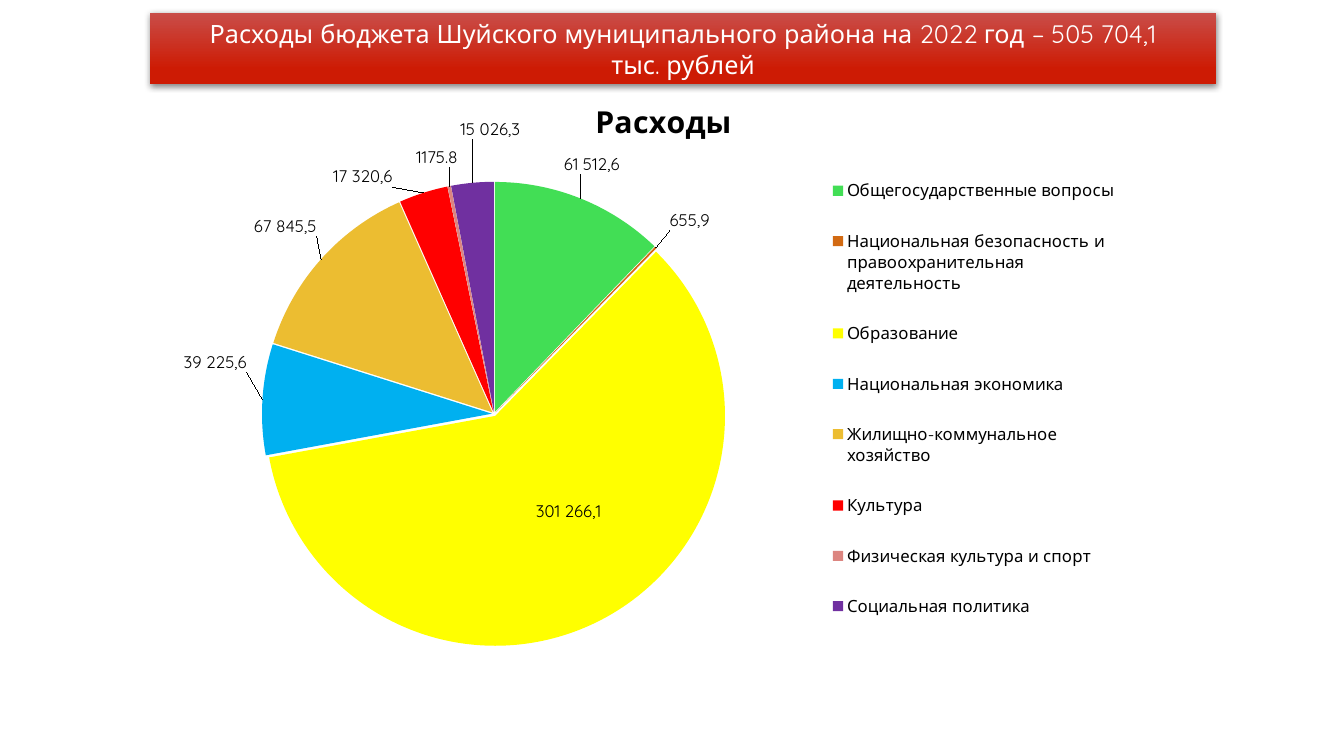
from lxml import etree
from pptx import Presentation
from pptx.chart.data import CategoryChartData as Data
from pptx.dml.color import RGBColor
from pptx.enum.chart import XL_CHART_TYPE as Kind
from pptx.enum.chart import XL_LABEL_POSITION as Spot
from pptx.enum.chart import XL_LEGEND_POSITION as Side
from pptx.enum.text import MSO_ANCHOR as Anchor
from pptx.enum.text import MSO_AUTO_SIZE as Fit
from pptx.enum.text import PP_ALIGN as Align
from pptx.oxml import parse_xml
from pptx.oxml.ns import qn
from pptx.util import Cm, Pt

FONT = "Quicksand"
BLACK = RGBColor(0x00, 0x00, 0x00)
WHITE = RGBColor(0xFF, 0xFF, 0xFF)
ROSE = RGBColor(0xC9, 0x4D, 0x48)
RED = RGBColor(0xCD, 0x1B, 0x04)

TITLE = ("Расходы бюджета Шуйского муниципального района на 2022 год – 505 704,1\n"
         "тыс. рублей")

# Category, value, colour, label text, label shift as a share of the chart
PARTS = [
    ("Общегосударственные вопросы", 61512.6,
     RGBColor(0x42, 0xDE, 0x55), "61 512,6", (-0.02, -0.03)),
    ("Национальная безопасность и правоохранительная деятельность", 655.9,
     RGBColor(0xD2, 0x6A, 0x12), "655,9", (0.01, -0.02)),
    ("Образование", 301266.1,
     RGBColor(0xFF, 0xFF, 0x00), "301 266,1", (0.02, -0.01)),
    ("Национальная экономика", 39225.6,
     RGBColor(0x00, 0xB0, 0xF0), "39 225,6", (-0.01, -0.06)),
    ("Жилищно-коммунальное хозяйство", 67845.5,
     RGBColor(0xEC, 0xBD, 0x31), "67 845,5", (0, -0.03)),
    ("Культура", 17320.6,
     RGBColor(0xFF, 0x00, 0x00), "17 320,6", (-0.03, 0)),
    ("Физическая культура и спорт", 1175.8,
     RGBColor(0xDC, 0x85, 0x80), None, (0.01, -0.02)),
    ("Социальная политика", 15026.3,
     RGBColor(0x70, 0x30, 0xA0), "15 026,3", (0.05, -0.06)),
]
INNER = 2  # the slice whose label stays inside

SHADOW = """<a:effectLst
 xmlns:a="http://schemas.openxmlformats.org/drawingml/2006/main">
 <a:outerShdw blurRad="57150" dist="19050" dir="5400000" algn="ctr" rotWithShape="0">
 <a:srgbClr val="000000"><a:alpha val="48000"/></a:srgbClr>
 </a:outerShdw></a:effectLst>"""


def style(font, size, color, bold=False):
    font.name = FONT
    font.size = Pt(size)
    font.bold = bold
    font.color.rgb = color


def layout(**vals):
    """Return a manual chart layout with the given settings."""
    root = etree.Element(qn("c:layout"))
    man = etree.SubElement(root, qn("c:manualLayout"))
    for name, val in vals.items():
        etree.SubElement(man, qn("c:" + name)).set("val", str(val))
    return root


def banner(shape):
    shape.left, shape.top = Cm(3.78), Cm(0.33)
    shape.width, shape.height = Cm(26.87), Cm(1.8)
    # Gradient and shadow
    fill = shape.fill
    fill.gradient()
    fill.gradient_angle = 270
    for stop, color, pos in zip(fill.gradient_stops, (ROSE, RED), (0, 0.78)):
        stop.color.rgb = color
        stop.position = pos
    shape.line.fill.background()
    shape._element.spPr.append(parse_xml(SHADOW))
    # Text
    frame = shape.text_frame
    frame.text = TITLE
    frame.word_wrap = True
    frame.auto_size = Fit.NONE
    frame.vertical_anchor = Anchor.MIDDLE
    for para in frame.paragraphs:
        para.alignment = Align.CENTER
        for run in para.runs:
            style(run.font, 18, WHITE)


def slices(series):
    for i, (_, _, color, text, _) in enumerate(PARTS):
        point = series.points[i]
        point.format.fill.solid()
        point.format.fill.fore_color.rgb = color
        point.format.line.fill.background()
        label = point.data_label
        if text:
            label.text_frame.text = text
            style(label.text_frame.paragraphs[0].runs[0].font, 12, BLACK)
        else:
            style(label.font, 12, BLACK)
        label.position = Spot.CENTER if i == INNER else Spot.OUTSIDE_END
    # Label shifts
    root = series._element
    for item, part in zip(root.iter(qn("c:dLbl")), PARTS):
        x, y = part[-1]
        item.find(qn("c:idx")).addnext(layout(x=x, y=y))
    # Small gap between slices
    gap = etree.Element(qn("c:explosion"))
    gap.set("val", "1")
    root.find(qn("c:dPt")).addprevious(gap)


def pie(slide):
    data = Data()
    data.categories = [part[0] for part in PARTS]
    data.add_series("Расходы", [part[1] for part in PARTS])
    chart = slide.shapes.add_chart(
        Kind.PIE, Cm(4.52), Cm(1.93), Cm(24.41), Cm(15.6), data).chart
    style(chart.font, 18, BLACK)
    # Chart title
    chart.has_title = True
    head = chart.chart_title
    head.include_in_layout = False
    head.text_frame.text = "Расходы"
    style(head.text_frame.paragraphs[0].runs[0].font, 21.6, BLACK, True)
    # Slices and labels
    plot = chart.plots[0]
    plot.vary_by_categories = True
    series = plot.series[0]
    labels = series.data_labels
    labels.show_value = True
    style(labels.font, 12, BLACK)
    slices(series)
    root = labels._element
    lead = root.find(qn("c:showLeaderLines"))
    if lead is None:
        lead = etree.SubElement(root, qn("c:showLeaderLines"))
    lead.set("val", "1")
    # Plot area
    area = chart._chartSpace.find(".//" + qn("c:plotArea"))
    for old in area.findall(qn("c:layout")):
        area.remove(old)
    area.insert(0, layout(layoutTarget="inner", xMode="edge", yMode="edge",
                          x=0.05, y=0.17, w=0.55, h=0.75))
    # Legend
    chart.has_legend = True
    legend = chart.legend
    legend.position = Side.RIGHT
    legend.include_in_layout = False
    style(legend.font, 12, BLACK)
    root = legend._element
    for old in root.findall(qn("c:layout")):
        root.remove(old)
    root.find(qn("c:legendPos")).addnext(
        layout(xMode="edge", yMode="edge", x=0.66, y=0.12, w=0.32, h=0.8))


def main():
    deck = Presentation()
    deck.slide_width, deck.slide_height = Cm(33.87), Cm(19.05)
    slide = deck.slides.add_slide(deck.slide_layouts[5])
    banner(slide.shapes.title)
    pie(slide)
    deck.save("out.pptx")


if __name__ == "__main__":
    main()
